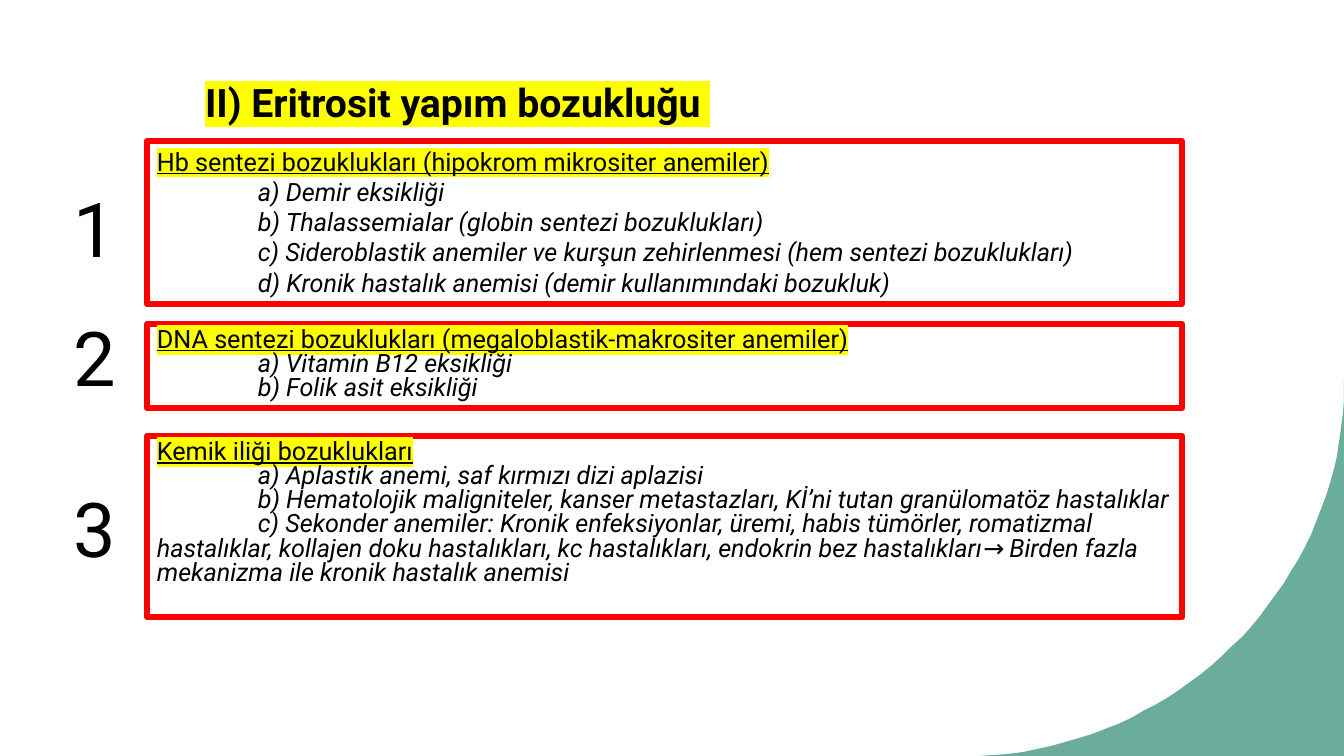
from lxml import etree
from pptx import Presentation
from pptx.dml.color import RGBColor
from pptx.enum.shapes import MSO_SHAPE
from pptx.enum.text import MSO_ANCHOR, PP_ALIGN
from pptx.oxml.ns import qn
from pptx.util import Emu, Pt

PX = 914400 / 100.8
SLIDE_W, SLIDE_H = 1344, 756
TITLE_ONLY = 5
FONT = "Roboto"
RECTANGLE = MSO_SHAPE.RECTANGLE
TOP = MSO_ANCHOR.TOP
LEFT, CENTER = PP_ALIGN.LEFT, PP_ALIGN.CENTER
COLORS = {"text": "000000", "marker": "FFFF00", "frame": "FF0000", "corner": "6BAD9C"}

TITLE = "II) Eritrosit yapım bozukluğu "
GROUPS = [
    {
        "number": "1", "number_top": 177, "top": 141, "height": 163,
        "frame_width": 4.25, "spacing": 1.0,
        "heading": "Hb sentezi bozuklukları (hipokrom mikrositer anemiler)",
        "causes": [
            "a) Demir eksikliği",
            "b) Thalassemialar (globin sentezi bozuklukları)",
            "c) Sideroblastik anemiler ve kurşun zehirlenmesi (hem sentezi bozuklukları)",
            "d) Kronik hastalık anemisi (demir kullanımındaki bozukluk)",
        ],
    },
    {
        "number": "2", "number_top": 306, "top": 324, "height": 84,
        "frame_width": 4.5, "spacing": 0.8,
        "heading": "DNA sentezi bozuklukları (megaloblastik-makrositer anemiler)",
        "causes": ["a) Vitamin B12 eksikliği", "b) Folik asit eksikliği"],
    },
    {
        "number": "3", "number_top": 477, "top": 436, "height": 181,
        "frame_width": 4.75, "spacing": 0.8,
        "heading": "Kemik iliği bozuklukları",
        "causes": [
            "a) Aplastik anemi, saf kırmızı dizi aplazisi",
            "b) Hematolojik maligniteler, kanser metastazları, Kİ’ni tutan "
            "granülomatöz hastalıklar",
            "c) Sekonder anemiler: Kronik enfeksiyonlar, üremi, habis tümörler, "
            "romatizmal hastalıklar, kollajen doku hastalıkları, kc hastalıkları, "
            "endokrin bez hastalıkları→ Birden fazla mekanizma ile kronik hastalık anemisi",
        ],
    },
]


def px(length):
    return Emu(round(length * PX))


def color(name):
    return RGBColor.from_string(COLORS[name])


def format_text(paragraph, size, align=LEFT, bold=False, italic=False,
                underline=False, marked=False):
    paragraph.alignment = align
    for run in paragraph.runs:
        font = run.font
        font.name, font.size = FONT, Pt(size)
        font.bold, font.italic, font.underline = bold, italic, underline
        font.color.rgb = color("text")
        if marked:
            highlight = etree.Element(qn("a:highlight"))
            etree.SubElement(highlight, qn("a:srgbClr"), val=COLORS["marker"])
            font.fill._xPr.find(qn("a:solidFill")).addnext(highlight)


def add_corner(slide, left, top, right, bottom):
    start, end = (left + 8, bottom), (right, top + 18)
    bends = (left + 206, bottom - 9), (right - 10, top + 211)
    steps = 40
    curve = []
    for step in range(steps + 1):
        t = step / steps
        weights = (1 - t) ** 3, 3 * t * (1 - t) ** 2, 3 * t * t * (1 - t), t ** 3
        points = start, *bends, end
        curve.append(tuple(sum(w * p[axis] for w, p in zip(weights, points))
                           for axis in range(2)))
    builder = slide.shapes.build_freeform(right, top, scale=PX)
    builder.add_line_segments([(right, bottom), (left, bottom), *curve], close=True)
    corner = builder.convert_to_shape()
    corner.shadow.inherit = False
    corner.fill.solid()
    corner.fill.fore_color.rgb = color("corner")
    corner.line.fill.background()


def add_title(slide, left, top, width, height):
    title = slide.shapes.title
    title.left, title.top = px(left), px(top)
    title.width, title.height = px(width), px(height)
    frame = title.text_frame
    frame.text = TITLE
    frame.word_wrap = True
    frame.vertical_anchor = TOP
    format_text(frame.paragraphs[0], 28, bold=True, marked=True)


def add_number(slide, group, left, width, height):
    number = slide.shapes.add_textbox(
        px(left), px(group["number_top"]), px(width), px(height))
    number.text_frame.text = group["number"]
    format_text(number.text_frame.paragraphs[0], 54, CENTER)


def add_group(slide, group, left, width):
    box = slide.shapes.add_shape(
        RECTANGLE, px(left), px(group["top"]), px(width), px(group["height"]))
    box.shadow.inherit = False
    box.fill.background()
    box.line.color.rgb = color("frame")
    box.line.width = Pt(group["frame_width"])
    frame = box.text_frame
    frame.word_wrap = True
    frame.vertical_anchor = TOP
    frame.text = "\n".join([group["heading"], *group["causes"]])
    heading, *causes = frame.paragraphs
    format_text(heading, 18, underline=True, marked=True)
    for cause in causes:
        format_text(cause, 18, italic=True)
        properties = cause._p.get_or_add_pPr()
        properties.set("marL", "0")
        properties.set("indent", str(px(101)))
    for paragraph in frame.paragraphs:
        paragraph.line_spacing = group["spacing"]


def main():
    presentation = Presentation()
    presentation.slide_width, presentation.slide_height = px(SLIDE_W), px(SLIDE_H)
    slide = presentation.slides.add_slide(presentation.slide_layouts[TITLE_ONLY])
    add_corner(slide, 971, 381, SLIDE_W, SLIDE_H)
    add_title(slide, 195, 73, 672, 57)
    for group in GROUPS:
        add_group(slide, group, 147, 1035)
        add_number(slide, group, 62, 65, 102)
    presentation.save("out.pptx")


if __name__ == "__main__":
    main()
